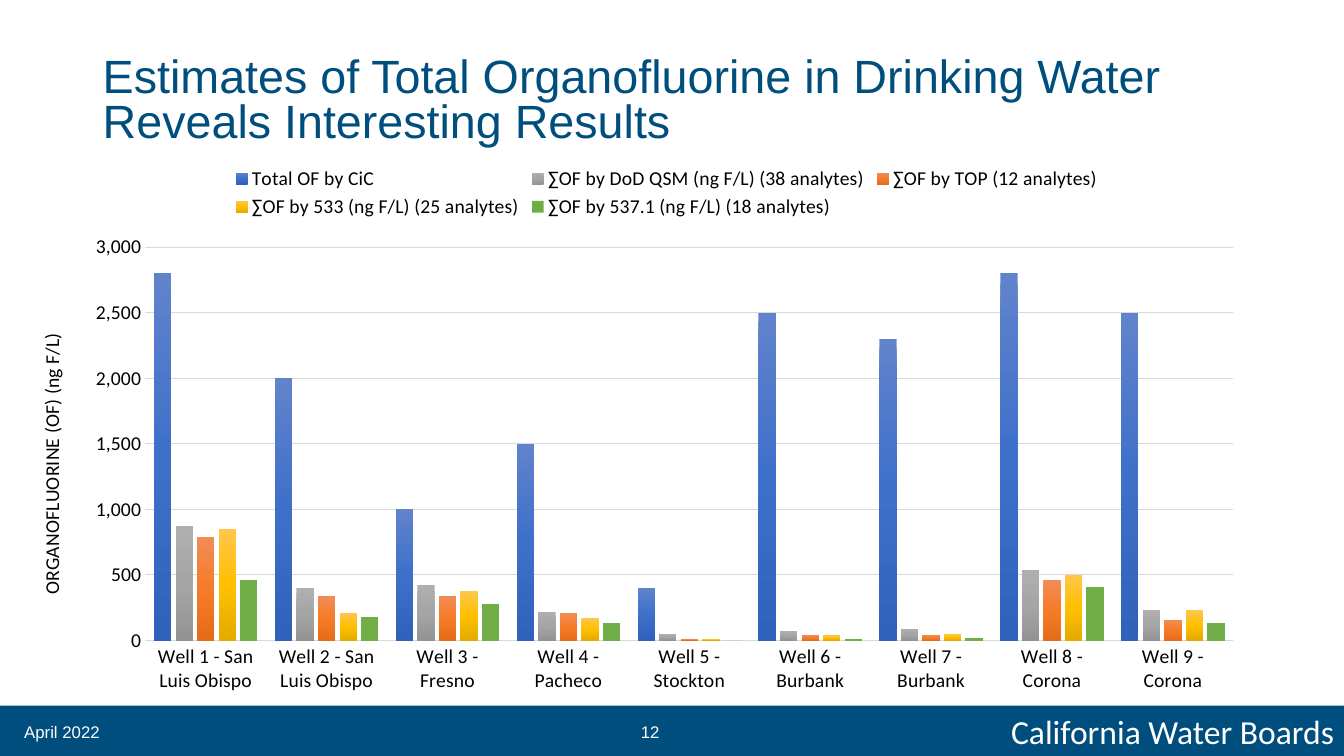
"""Build the slide on total organofluorine estimates in drinking water."""
from copy import deepcopy
from dataclasses import dataclass
from typing import Any

from pptx import Presentation
from pptx import util as u
from pptx.chart.data import CategoryChartData
from pptx.dml.color import RGBColor
from pptx.enum import chart as charts, shapes, text
from pptx.oxml import parse_xml
from pptx.oxml.ns import nsdecls

NAVY = RGBColor(0x00, 0x4E, 0x7D)
WHITE = RGBColor(0xFF, 0xFF, 0xFF)
BLACK = RGBColor(0x00, 0x00, 0x00)
GRID_GREY = RGBColor(0xD9, 0xD9, 0xD9)
BLUES = (RGBColor(0x61, 0x83, 0xCB), RGBColor(0x3E, 0x70, 0xCA), RGBColor(0x30, 0x62, 0xBB))
GREYS = (RGBColor(0xAF, 0xAF, 0xAF), RGBColor(0xA5, 0xA5, 0xA5), RGBColor(0x93, 0x93, 0x93))
ORANGES = (RGBColor(0xF1, 0x8C, 0x57), RGBColor(0xF6, 0x7B, 0x28), RGBColor(0xE5, 0x6C, 0x19))
GOLDS = (RGBColor(0xFF, 0xC6, 0x4B), RGBColor(0xFF, 0xC0, 0x00), RGBColor(0xE3, 0xAB, 0x00))
GREEN = (RGBColor(0x70, 0xAD, 0x47),)

STOP_POSITIONS = (0, 0.5, 1)
PLOT_LAYOUT = {"x": 0.091, "y": 0.167, "w": 0.854, "h": 0.715}
CHART_FONT = {"name": "Calibri", "size": u.Pt(14), "bold": False}


@dataclass(frozen=True)
class Label:
    """A text box with its place in centimetres and its type."""
    content: str
    place: tuple[float, float, float, float]
    size: float
    color: RGBColor
    line_spacing: float = 1.0


@dataclass(frozen=True)
class Method:
    """A measuring method with its values per well and its fill colours."""
    name: str
    values: tuple[int, ...]
    colors: tuple[RGBColor, ...]


LABELS = (
    Label("Estimates of Total Organofluorine in Drinking Water Reveals Interesting Results",
          (2.34, 1.27, 30.2, 2.64), 33.3, NAVY, 0.8),
    Label("12", (15.9, 17.93, 1.9, 1.02), 12, WHITE),
    Label("April 2022", (0.36, 17.93, 4.34, 1.02), 12, WHITE),
)
PLACES = ("San Luis Obispo", "San Luis Obispo", "Fresno", "Pacheco", "Stockton",
          "Burbank", "Burbank", "Corona", "Corona")
METHODS = (
    Method("Total OF by CiC",
           (2800, 2000, 1000, 1500, 400, 2500, 2300, 2800, 2500), BLUES),
    Method("∑OF by DoD QSM (ng F/L) (38 analytes)",
           (870, 400, 420, 220, 50, 70, 90, 540, 230), GREYS),
    Method("∑OF by TOP (12 analytes)",
           (790, 340, 340, 210, 10, 40, 40, 460, 160), ORANGES),
    Method("∑OF by 533 (ng F/L) (25 analytes)",
           (850, 210, 380, 170, 10, 40, 50, 500, 230), GOLDS),
    Method("∑OF by 537.1 (ng F/L) (18 analytes)",
           (460, 180, 280, 130, 0, 10, 20, 410, 130), GREEN),
)


def apply_format(target: Any, values: dict[str, Any]) -> None:
    """Set every attribute named in the format values."""
    for name, value in values.items():
        setattr(target, name, value)


def style_font(font: Any, values: dict[str, Any], color: RGBColor) -> None:
    """Give a font its format values and its colour."""
    apply_format(font, values)
    font.color.rgb = color


def add_footer(slide: Any) -> None:
    """Draw the footer band with the organisation name."""
    band = slide.shapes.add_shape(shapes.MSO_SHAPE.RECTANGLE, u.Cm(0), u.Cm(17.78),
                                  u.Cm(33.87), u.Cm(1.27))
    band.shadow.inherit = False
    band.fill.solid()
    band.fill.fore_color.rgb = NAVY
    band.line.fill.background()
    band.text_frame.vertical_anchor = text.MSO_ANCHOR.MIDDLE
    paragraph = band.text_frame.paragraphs[0]
    apply_format(paragraph, {"text": "California Water Boards", "alignment": text.PP_ALIGN.RIGHT})
    style_font(paragraph.font, {"name": "Calibri", "size": u.Pt(24)}, WHITE)


def add_label(slide: Any, label: Label) -> None:
    """Draw one text box."""
    frame = slide.shapes.add_textbox(*map(u.Cm, label.place)).text_frame
    apply_format(frame, {"word_wrap": True, "vertical_anchor": text.MSO_ANCHOR.MIDDLE})
    paragraph = frame.paragraphs[0]
    apply_format(paragraph, {"text": label.content, "line_spacing": label.line_spacing})
    style_font(paragraph.font, {"name": "Arial", "size": u.Pt(label.size)}, label.color)


def fill_series(series: Any, colors: tuple[RGBColor, ...]) -> None:
    """Fill a series with one colour or with a downward gradient."""
    series.invert_if_negative = False
    fill = series.format.fill
    if len(colors) == 1:
        fill.solid()
        fill.fore_color.rgb = colors[0]
        return
    fill.gradient()
    fill.gradient_angle = 270
    stop_list = series.format.element.xpath("c:spPr/a:gradFill/a:gsLst")[0] \
        if hasattr(series.format, "element") else series._element.xpath("c:spPr/a:gradFill/a:gsLst")[0]
    stop_list.append(deepcopy(stop_list[0]))
    for stop, position, color in zip(fill.gradient_stops, STOP_POSITIONS, colors):
        stop.position = position
        stop.color.rgb = color


def place_plot(chart: Any) -> None:
    """Fix the inner plot area as fractions of the chart."""
    plot_area = chart.element.xpath("c:chart/c:plotArea")[0]
    for layout in plot_area.xpath("c:layout"):
        plot_area.remove(layout)
    modes = '<c:xMode val="edge"/><c:yMode val="edge"/>'
    sizes = "".join(f'<c:{key} val="{value}"/>' for key, value in PLOT_LAYOUT.items())
    plot_area.insert(0, parse_xml(
        f'<c:layout {nsdecls("c")}><c:manualLayout><c:layoutTarget val="inner"/>'
        f'{modes}{sizes}</c:manualLayout></c:layout>'))


def style_axes(chart: Any) -> None:
    """Format both axes, the gridlines and the axis title."""
    for axis in (chart.category_axis, chart.value_axis):
        axis.major_tick_mark = charts.XL_TICK_MARK.NONE
        style_font(axis.tick_labels.font, CHART_FONT, BLACK)
    wells, amounts = chart.category_axis, chart.value_axis
    apply_format(amounts, {"minimum_scale": 0, "maximum_scale": 3000, "major_unit": 500})
    apply_format(amounts.tick_labels, {"number_format": "#,##0", "number_format_is_linked": False})
    amounts.format.line.fill.background()
    for line, width in ((wells.format.line, 1), (amounts.major_gridlines.format.line, 0.75)):
        line.color.rgb = GRID_GREY
        line.width = u.Pt(width)
    paragraph = amounts.axis_title.text_frame.paragraphs[0]
    paragraph.text = "ORGANOFLUORINE (OF) (ng F/L)"
    style_font(paragraph.runs[0].font, CHART_FONT, BLACK)


def add_well_chart(slide: Any) -> None:
    """Draw the column chart of all wells and methods."""
    data = CategoryChartData(number_format="#,##0")
    data.categories = [f"Well {number} - {place}" for number, place in enumerate(PLACES, 1)]
    for method in METHODS:
        data.add_series(method.name, method.values)
    chart = slide.shapes.add_chart(charts.XL_CHART_TYPE.COLUMN_CLUSTERED, u.Cm(0.74), u.Cm(3.91),
                                   u.Cm(32.11), u.Cm(13.87), data).chart
    apply_format(chart, {"has_title": False, "has_legend": True})
    style_font(chart.font, CHART_FONT, BLACK)
    apply_format(chart.legend, {"position": charts.XL_LEGEND_POSITION.TOP,
                                "include_in_layout": False})
    style_font(chart.legend.font, CHART_FONT, BLACK)
    apply_format(chart.plots[0], {"gap_width": 100, "overlap": -24, "vary_by_categories": False})
    for series, method in zip(chart.plots[0].series, METHODS):
        fill_series(series, method.colors)
    style_axes(chart)
    place_plot(chart)


def main() -> None:
    """Assemble and save the presentation."""
    presentation = Presentation()
    apply_format(presentation, {"slide_width": u.Cm(33.87), "slide_height": u.Cm(19.05)})
    slide = presentation.slides.add_slide(presentation.slide_layouts[6])
    add_footer(slide)
    add_well_chart(slide)
    for label in LABELS:
        add_label(slide, label)
    presentation.save("out.pptx")


if __name__ == "__main__":
    main()
